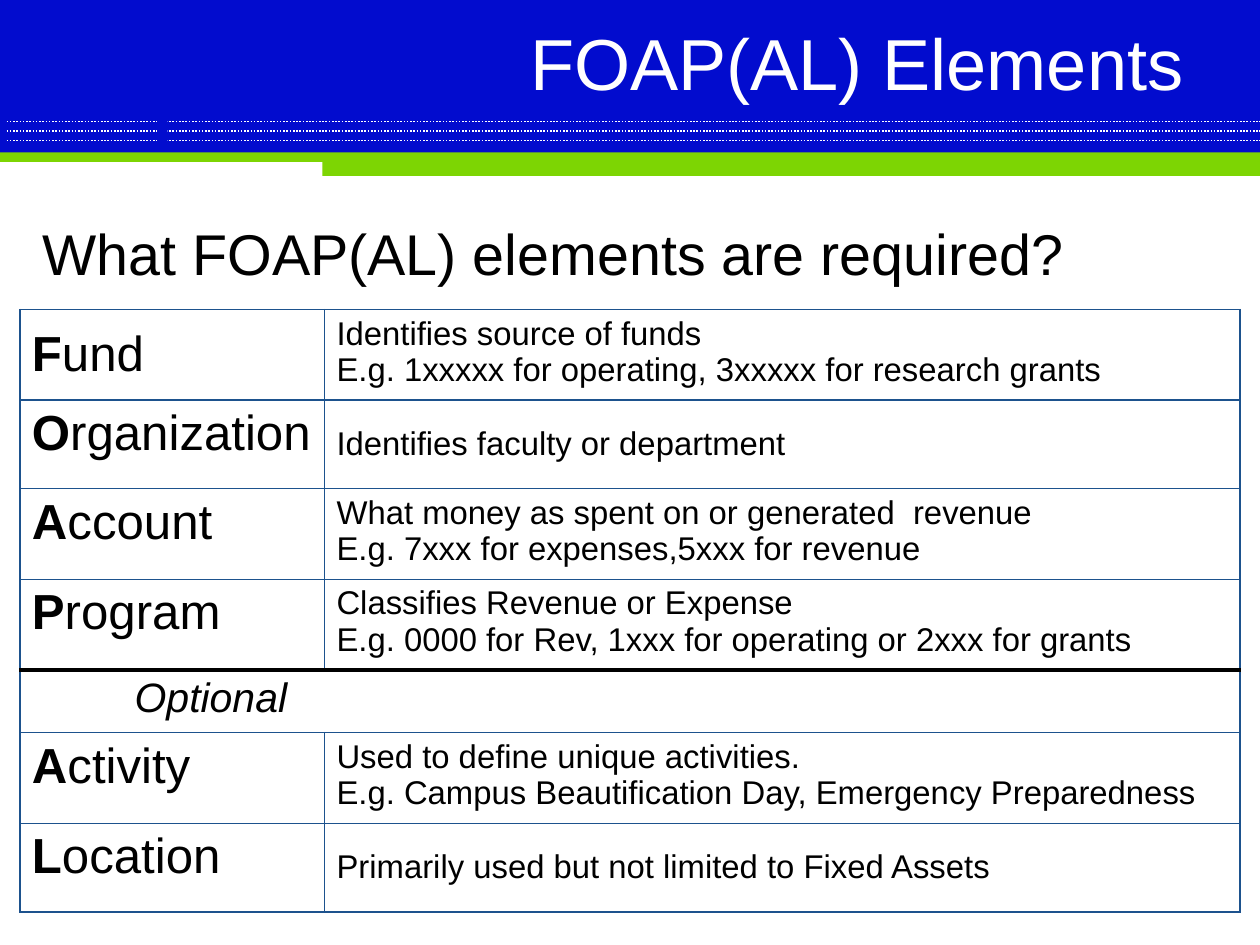
from lxml import etree
from pptx import Presentation
from pptx.dml.color import RGBColor
from pptx.enum.dml import MSO_LINE
from pptx.enum.shapes import MSO_CONNECTOR, MSO_SHAPE
from pptx.enum.text import MSO_ANCHOR, PP_ALIGN
from pptx.oxml.ns import qn
from pptx.util import Inches, Pt

# Content
TITLE = "FOAP(AL) Elements"
QUESTION = "What FOAP(AL) elements are required?"
OPTIONAL = "Optional"
# Element, description lines, anchor of the name, anchor of the description
TOP, MIDDLE = MSO_ANCHOR.TOP, MSO_ANCHOR.MIDDLE
REQUIRED_ELEMENTS = [
    ("Fund", ["Identifies source of funds",
              "E.g. 1xxxxx for operating, 3xxxxx for research grants"], MIDDLE, TOP),
    ("Organization", ["Identifies faculty or department"], TOP, MIDDLE),
    ("Account", ["What money as spent on or generated  revenue",
                 "E.g. 7xxx for expenses,5xxx for revenue"], TOP, TOP),
    ("Program", ["Classifies Revenue or Expense",
                 "E.g. 0000 for Rev, 1xxx for operating or 2xxx for grants"], TOP, TOP),
]
OPTIONAL_ELEMENTS = [
    ("Activity", ["Used to define unique activities.",
                  "E.g. Campus Beautification Day, Emergency Preparedness"], TOP, TOP),
    ("Location", ["Primarily used but not limited to Fixed Assets"], TOP, MIDDLE),
]

THEME = {
    "font": "Arial",
    "blue": "020CCE", "green": "7DD503", "white": "FFFFFF", "black": "000000",
    "grid": "1D528D",
    "title": 44, "question": 35, "element": 30, "optional": 25, "description": 20,
}
WIDTH, HEIGHT = 10.67, 8
COLUMN_WIDTHS = [2.58, 7.75]
ROW_HEIGHT, OPTIONAL_HEIGHT = 0.75, 0.53


def color(name):
    return RGBColor.from_string(THEME[name])


def write_text(frame, lines, *, size, ink="black", align=PP_ALIGN.LEFT, anchor=TOP,
               italic=False, bold_initial=False, indent=0):
    """Write one paragraph per line, with an optional bold first letter."""
    frame.word_wrap = True
    frame.vertical_anchor = anchor
    for index, line in enumerate(lines):
        paragraph = frame.paragraphs[0] if index == 0 else frame.add_paragraph()
        paragraph.alignment = align
        if indent:
            properties = paragraph._p.get_or_add_pPr()
            properties.set("marL", str(Inches(indent)))
            properties.set("indent", "0")
        parts = [(line[0], True), (line[1:], False)] if bold_initial else [(line, False)]
        for text, bold in parts:
            run = paragraph.add_run()
            run.text = text
            run.font.name = THEME["font"]
            run.font.size = Pt(THEME[size])
            run.font.color.rgb = color(ink)
            run.font.bold = bold
            run.font.italic = italic


def set_insets(frame, right=0.11):
    frame.margin_left, frame.margin_right = Inches(0.11), Inches(right)
    frame.margin_top = frame.margin_bottom = Inches(0.05)


def add_block(slide, left, top, width, height, fill):
    block = slide.shapes.add_shape(MSO_SHAPE.RECTANGLE, Inches(left), Inches(top),
                                   Inches(width), Inches(height))
    block.shadow.inherit = False
    block.fill.solid()
    block.fill.fore_color.rgb = color(fill)
    block.line.fill.background()


def add_dotted_line(slide, top):
    line = slide.shapes.add_connector(MSO_CONNECTOR.STRAIGHT, 0, Inches(top),
                                      Inches(WIDTH), Inches(top))
    line.line.color.rgb = color("white")
    line.line.width = Pt(1)
    line.line.dash_style = MSO_LINE.ROUND_DOT
    etree.SubElement(line._element.spPr, qn("a:effectLst"))


def set_borders(cell, heavy=None):
    """Draw all four cell borders; the heavy side is thick and black."""
    properties = cell._tc.get_or_add_tcPr()
    for side in "LRTB":
        ink, width = ("black", 3) if side == heavy else ("grid", 1)
        border = etree.SubElement(properties, qn(f"a:ln{side}"), w=str(Pt(width)))
        fill = etree.SubElement(border, qn("a:solidFill"))
        etree.SubElement(fill, qn("a:srgbClr"), val=THEME[ink])


def add_element_table(slide):
    rows = REQUIRED_ELEMENTS + [None] + OPTIONAL_ELEMENTS
    divider = len(REQUIRED_ELEMENTS)
    heights = [ROW_HEIGHT if row else OPTIONAL_HEIGHT for row in rows]
    table = slide.shapes.add_table(
        len(rows), len(COLUMN_WIDTHS), Inches(0.17), Inches(2.62),
        Inches(sum(COLUMN_WIDTHS)), Inches(sum(heights))).table
    table.first_row = table.horz_banding = False
    for column, width in zip(table.columns, COLUMN_WIDTHS):
        column.width = Inches(width)
    for index, (row, height) in enumerate(zip(rows, heights)):
        table.rows[index].height = Inches(height)
        name_cell, description_cell = table.rows[index].cells
        heavy = {divider - 1: "B", divider: "T"}.get(index)
        for cell in (name_cell, description_cell):
            set_borders(cell, heavy)
            cell.fill.background()
        if row is None:
            name_cell.merge(description_cell)
            write_text(name_cell.text_frame, [OPTIONAL], size="optional",
                       italic=True, indent=0.87)
            continue
        name, description, name_anchor, description_anchor = row
        write_text(name_cell.text_frame, [name], size="element", bold_initial=True)
        write_text(description_cell.text_frame, description, size="description")
        name_cell.vertical_anchor = name_anchor
        description_cell.vertical_anchor = description_anchor


def main():
    presentation = Presentation()
    presentation.slide_width, presentation.slide_height = Inches(WIDTH), Inches(HEIGHT)
    slide = presentation.slides.add_slide(presentation.slide_layouts[5])

    # Header band, dotted lines, green step and the strips that break the dots
    add_block(slide, 0, 0, WIDTH, 1.33, "blue")
    for number in range(3):
        add_dotted_line(slide, 1.03 + 0.08 * number)
    add_block(slide, 0, 1.29, WIDTH, 0.08, "green")
    add_block(slide, 2.73, 1.32, WIDTH - 2.73, 0.17, "green")
    for left, width in [(0, 0.05), (1.33, 0.09)]:
        add_block(slide, left, 0, width, 1.24, "blue")

    # Title, brought in front of the header band
    title = slide.shapes.title
    title.left, title.top = Inches(2.93), Inches(0.21)
    title.width, title.height = Inches(7.38), Inches(0.62)
    set_insets(title.text_frame, right=0.28)
    write_text(title.text_frame, [TITLE], size="title", ink="white",
               align=PP_ALIGN.RIGHT, anchor=MIDDLE)
    slide.shapes._spTree.append(title._element)

    # Question
    question = slide.shapes.add_textbox(Inches(0.25), Inches(1.8), Inches(10.25), Inches(0.7))
    set_insets(question.text_frame)
    write_text(question.text_frame, [QUESTION], size="question")

    # Table of elements
    add_element_table(slide)
    presentation.save("out.pptx")


if __name__ == "__main__":
    main()
